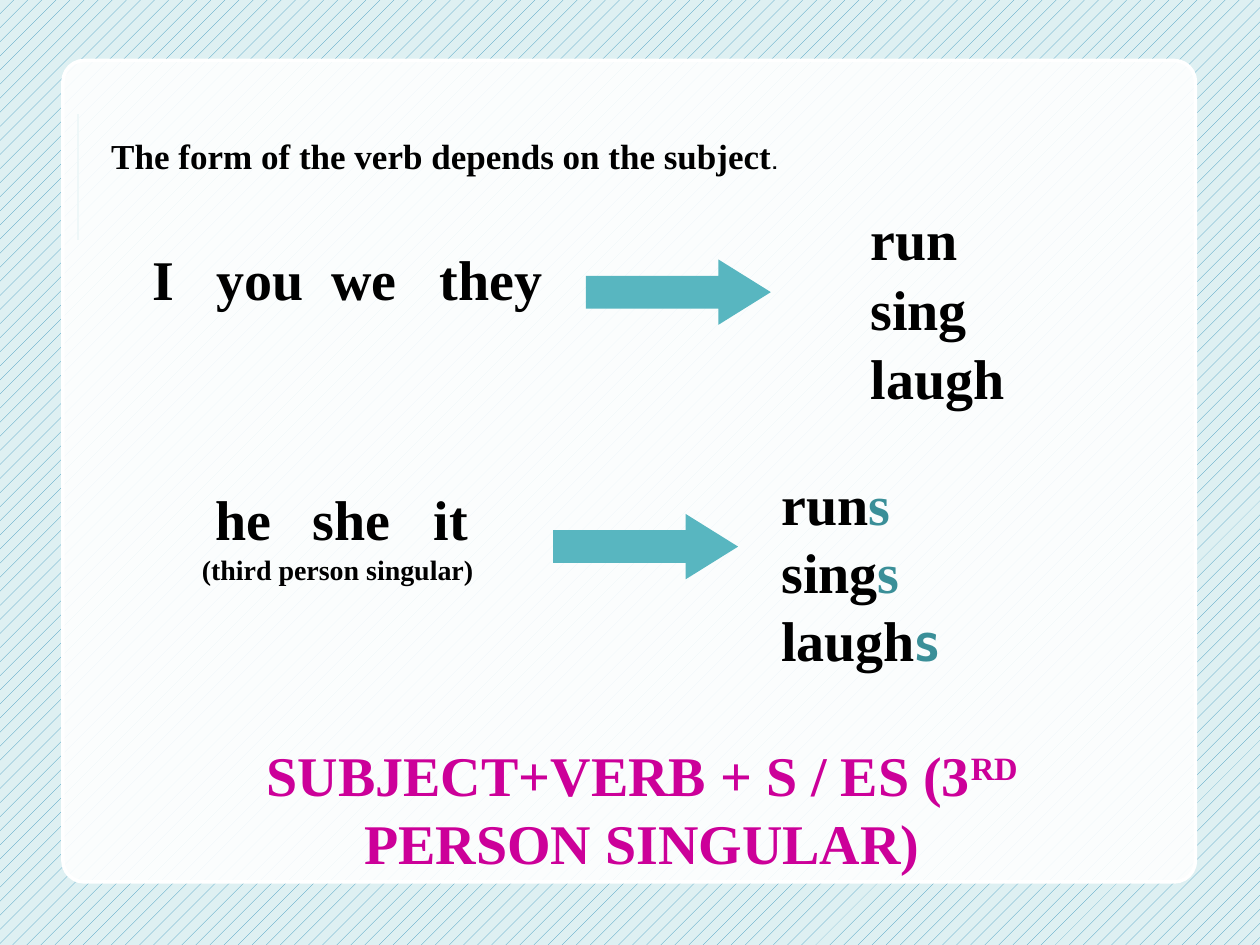
from lxml import etree
from pptx import Presentation
from pptx import util as u
from pptx.dml.color import RGBColor
from pptx.enum import dml, shapes, text
from pptx.oxml.ns import qn

BLACK = RGBColor(0x00, 0x00, 0x00)
WHITE = RGBColor(0xFF, 0xFF, 0xFF)
BLUE = RGBColor(0x34, 0x94, 0xBA)
PALE = RGBColor(0xDE, 0xF0, 0xF2)
TEAL = RGBColor(0x58, 0xB6, 0xC0)
DARK_TEAL = RGBColor(0x3A, 0x8F, 0x98)
MAGENTA = RGBColor(0xCC, 0x00, 0x99)
SERIF, SANS = "Times New Roman", "Cabin"
LEFT, CENTER = text.PP_ALIGN.LEFT, text.PP_ALIGN.CENTER

prs = Presentation()
prs.slide_width, prs.slide_height = u.Cm(25.4), u.Cm(19.05)
s = prs.slides.add_slide(prs.slide_layouts[6])


def add_text(x, y, w, h, align=LEFT, indent=0.25):
    tf = s.shapes.add_textbox(u.Cm(x), u.Cm(y), u.Cm(w), u.Cm(h)).text_frame
    tf.word_wrap = True
    tf.margin_left = u.Cm(indent)
    tf.paragraphs[0].alignment = align
    return tf


def add_run(p, words, size=32, color=BLACK, font=SERIF, bold=True):
    r = p.add_run()
    r.text = words
    r.font.size, r.font.name, r.font.bold = u.Pt(size), font, bold
    r.font.color.rgb = color
    return r


# Hatched background
fill = s.background.fill
fill.patterned()
fill.pattern = dml.MSO_PATTERN.PERCENT_10
fill.fore_color.rgb = BLUE
fill.back_color.rgb = PALE

# Accent line behind the panel
sp = s.shapes.add_connector(shapes.MSO_CONNECTOR.STRAIGHT,
                            u.Cm(1.57), u.Cm(4.83), u.Cm(1.57), u.Cm(2.29))
sp.line.color.rgb, sp.line.width = TEAL, u.Pt(1.5)
etree.SubElement(sp._element.spPr, qn("a:effectLst"))

# Translucent rounded panel
sp = s.shapes.add_shape(shapes.MSO_SHAPE.ROUNDED_RECTANGLE,
                        u.Cm(1.27), u.Cm(1.22), u.Cm(22.83), u.Cm(16.56))
sp.shadow.inherit = False
sp.adjustments[0] = 0.026
sp.fill.solid()
sp.fill.fore_color.rgb = WHITE
color = sp._element.spPr.find(".//" + qn("a:srgbClr"))
etree.SubElement(color, qn("a:alpha"), val="90000")
sp.line.color.rgb, sp.line.width = WHITE, u.Pt(2)

# Heading
tf = add_text(1.93, 2.59, 14.07, 1.12, CENTER)
tf.word_wrap = False
add_run(tf.paragraphs[0], "The form of the verb depends on the subject", 20)
add_run(tf.paragraphs[0], ".", 18, font=SANS, bold=False)

# Pronouns, spaced by tab stops
for x, y, w, h, indent, words, stops in (
        (1.85, 4.8, 10.36, 1.63, 1.22, "I\tyou\twe\tthey", (1.3, 3.61, 5.79)),
        (3.38, 9.65, 7.04, 2.31, 0.69, "\the\tshe\tit", (0.28, 2.24, 4.67))):
    tf = add_text(x, y, w, h, indent=indent)
    p = tf.paragraphs[0]
    add_run(p, words)
    tabs = etree.SubElement(p._p.get_or_add_pPr(), qn("a:tabLst"))
    for stop in stops:
        etree.SubElement(tabs, qn("a:tab"), pos=str(u.Cm(stop)), algn="l")
add_run(tf.add_paragraph(), "(third person singular)", 16)

# Arrows from pronouns to verbs
for x, y in ((11.81, 5.23), (11.15, 10.36)):
    sp = s.shapes.add_shape(shapes.MSO_SHAPE.RIGHT_ARROW,
                            u.Cm(x), u.Cm(y), u.Cm(3.73), u.Cm(1.32))
    sp.shadow.inherit = False
    sp.adjustments[1] = 0.802
    sp.fill.solid()
    sp.fill.fore_color.rgb = TEAL
    sp.line.fill.background()

# Verb forms, plain and with the ending
for x, y, step, ending in ((17.3, 3.99, 1.41, ""), (15.5, 9.35, 1.37, "s")):
    for i, verb in enumerate(("run", "sing", "laugh")):
        p = add_text(x, y + i * step, 4.5, 1.63).paragraphs[0]
        add_run(p, verb)
        if ending:
            add_run(p, ending, color=DARK_TEAL,
                    font=SANS if verb == "laugh" else SERIF)

# Rule
p = add_text(3.38, 14.81, 19.13, 3, CENTER).paragraphs[0]
add_run(p, "SUBJECT+VERB + S / ES (3", color=MAGENTA)
r = add_run(p, "RD", color=MAGENTA)
r._r.get_or_add_rPr().set("baseline", "30000")
add_run(p, " PERSON SINGULAR)", color=MAGENTA)

prs.save("out.pptx")
